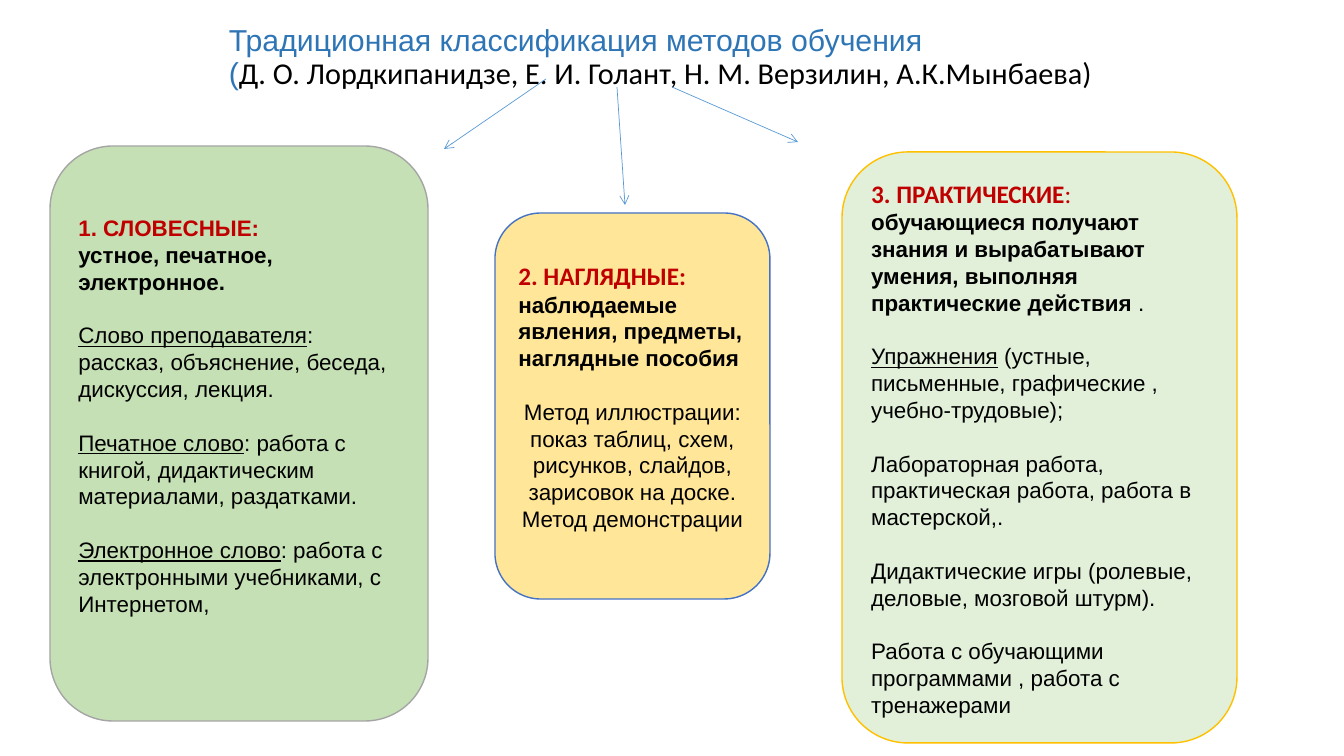
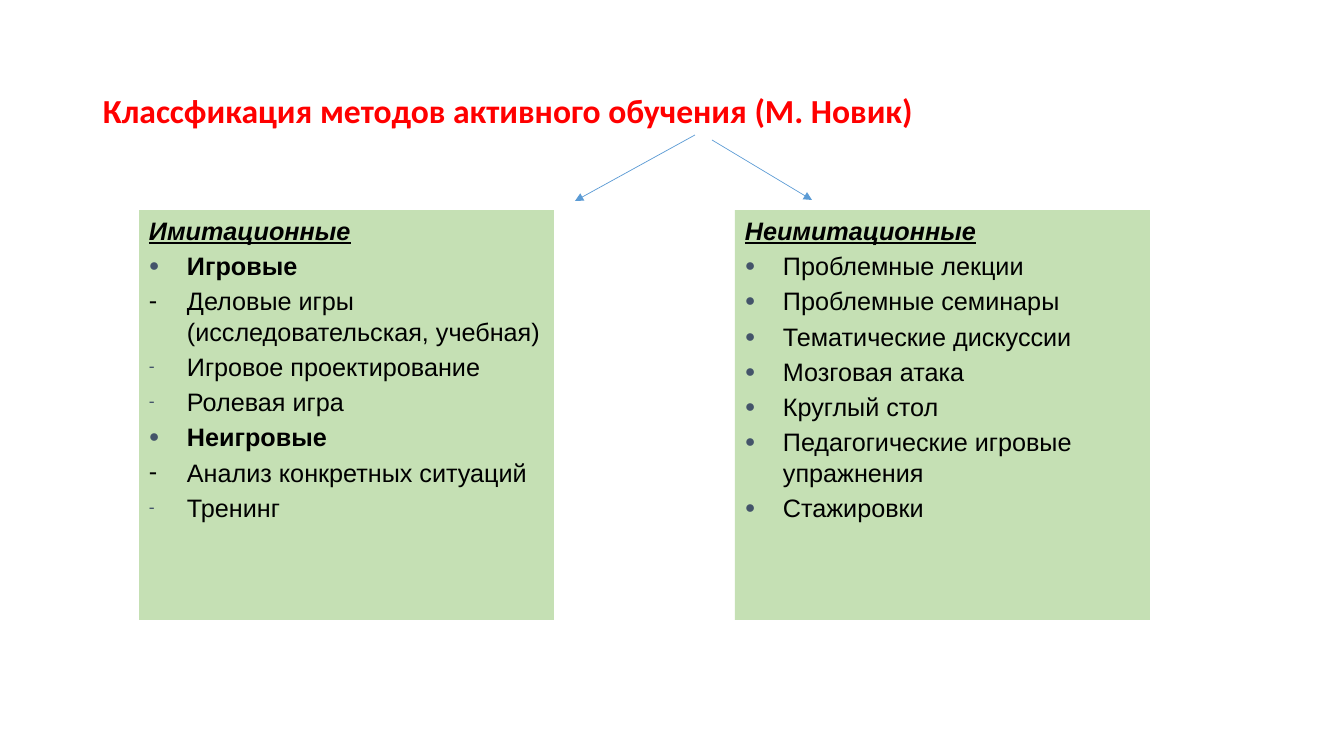
from lxml.etree import SubElement
from pptx import Presentation
from pptx.dml.color import RGBColor
from pptx.enum.shapes import MSO_CONNECTOR, MSO_SHAPE
from pptx.enum.text import MSO_ANCHOR, PP_ALIGN
from pptx.oxml.ns import qn
from pptx.util import Emu, Pt

PX = 914400 / 100.8

BLACK = RGBColor(0x00, 0x00, 0x00)
RED = RGBColor(0xFF, 0x00, 0x00)
DARK_RED = RGBColor(0xC0, 0x00, 0x00)
TITLE_BLUE = RGBColor(0x2E, 0x75, 0xB6)
ARROW_BLUE = RGBColor(0x5B, 0x9B, 0xD5)
BORDER_BLUE = RGBColor(0x44, 0x72, 0xC4)
SLATE = RGBColor(0x44, 0x54, 0x6A)
GRAY = RGBColor(0xA5, 0xA5, 0xA5)
GOLD = RGBColor(0xFF, 0xC0, 0x00)
GREEN = RGBColor(0xC5, 0xE0, 0xB4)
PALE_GREEN = RGBColor(0xE2, 0xF0, 0xD9)
YELLOW = RGBColor(0xFF, 0xE6, 0x99)

BODY = {"name": "Arial", "size": Pt(16), "color": BLACK}
STRONG = BODY | {"bold": True}
UNDERLINED = BODY | {"underline": True}
ARIAL_HEADING = STRONG | {"color": DARK_RED}
CALIBRI_HEADING = ARIAL_HEADING | {"name": "Calibri", "size": Pt(18)}
TITLE = {"name": "Arial", "size": Pt(21.6), "color": TITLE_BLUE}
AUTHORS = TITLE | {"name": "Calibri", "color": BLACK}
RED_TITLE = {"name": "Calibri", "size": Pt(24), "color": RED, "bold": True}
ITEM = BODY | {"size": Pt(18)}
GROUP = ITEM | {"bold": True}
LIST_HEADING = GROUP | {"italic": True, "underline": True}

GAP = {"space_before": Pt(19)}
CENTERED = {"alignment": PP_ALIGN.CENTER}
HANGING = 38

DOT = ("●", SLATE, 70)
SMALL_DASH = ("-", SLATE, 70)
DASH = ("-", BLACK, 100)


def px(value):
    return Emu(round(value * PX))


def set_attributes(target, values):
    for name, value in values.items():
        setattr(target, name, value)


def add_runs(paragraph, runs):
    for text, style in runs:
        run = paragraph.add_run()
        run.text = text
        set_attributes(run.font, {k: v for k, v in style.items() if k != "color"})
        run.font.color.rgb = style["color"]


def set_bullet(paragraph, bullet):
    properties = paragraph._p.get_or_add_pPr()
    properties.set("marL", str(px(HANGING)))
    properties.set("indent", str(-px(HANGING)))
    if bullet is None:
        SubElement(properties, qn("a:buNone"))
        return
    character, color, percent = bullet
    bullet_color = SubElement(properties, qn("a:buClr"))
    SubElement(bullet_color, qn("a:srgbClr"), val=str(color))
    SubElement(properties, qn("a:buSzPct"), val=str(percent * 1000))
    SubElement(properties, qn("a:buFont"), typeface="Arial")
    SubElement(properties, qn("a:buChar"), char=character)


def next_paragraph(frame, index):
    return frame.add_paragraph() if index else frame.paragraphs[0]


def add_title(slide, box, lines):
    frame = slide.shapes.add_textbox(*map(px, box)).text_frame
    set_attributes(frame, {"word_wrap": True, "vertical_anchor": MSO_ANCHOR.MIDDLE})
    paragraph = frame.paragraphs[0]
    paragraph.line_spacing = 0.9
    for index, runs in enumerate(lines):
        if index:
            paragraph.add_line_break()
        add_runs(paragraph, runs)


def add_panel(slide, kind, box, fill, border=None, top_margin=5):
    shape = slide.shapes.add_shape(kind, *map(px, box))
    shape.shadow.inherit = False
    shape.fill.solid()
    shape.fill.fore_color.rgb = fill
    if border is None:
        shape.line.fill.background()
    else:
        shape.line.color.rgb = border
        shape.line.width = Pt(1)
    frame = shape.text_frame
    set_attributes(frame, {"word_wrap": True, "vertical_anchor": MSO_ANCHOR.TOP,
                           "margin_top": px(top_margin)})
    return frame


def add_method_card(slide, box, fill, border, top_margin, paragraphs):
    frame = add_panel(slide, MSO_SHAPE.ROUNDED_RECTANGLE, box, fill, border, top_margin)
    for index, (layout, runs) in enumerate(paragraphs):
        paragraph = next_paragraph(frame, index)
        set_attributes(paragraph, {"alignment": PP_ALIGN.LEFT} | layout)
        add_runs(paragraph, runs)


def add_list_panel(slide, box, heading, items):
    frame = add_panel(slide, MSO_SHAPE.RECTANGLE, box, GREEN)
    rows = [(None, heading, LIST_HEADING), *items]
    for index, (bullet, text, style) in enumerate(rows):
        paragraph = next_paragraph(frame, index)
        paragraph.alignment = PP_ALIGN.LEFT
        if index:
            paragraph.space_before = Pt(3.6)
        set_bullet(paragraph, bullet)
        add_runs(paragraph, [(text, style)])


def add_arrows(slide, head, arrows):
    for ends in arrows:
        arrow = slide.shapes.add_connector(MSO_CONNECTOR.STRAIGHT, *map(px, ends))
        arrow.line.color.rgb = ARROW_BLUE
        arrow.line.width = Pt(0.5)
        SubElement(arrow.line._get_or_add_ln(), qn("a:tailEnd"), type=head)
        SubElement(arrow._element.spPr, qn("a:effectLst"))


def build_traditional_slide(slide):
    add_title(slide, (219, 30, 907, 56), [
        [("Традиционная классификация методов обучения ", TITLE)],
        [("(", TITLE),
         ("Д. О. Лордкипанидзе, Е. И. Голант, Н. М. Верзилин, А.К.Мынбаева)", AUTHORS)],
    ])
    add_method_card(slide, (50, 146, 378, 575), GREEN, GRAY, 50, [
        ({}, [("1. СЛОВЕСНЫЕ:", ARIAL_HEADING)]),
        ({}, [("устное, печатное, электронное.", STRONG)]),
        (GAP, [("Слово преподавателя", UNDERLINED),
               (": рассказ, объяснение, беседа, дискуссия, лекция.", BODY)]),
        (GAP, [("Печатное слово", UNDERLINED),
               (": работа с книгой, дидактическим материалами, раздатками.", BODY)]),
        (GAP, [("Электронное слово", UNDERLINED),
               (": работа с электронными учебниками, с Интернетом,", BODY)]),
    ])
    add_method_card(slide, (495, 213, 275, 386), YELLOW, BORDER_BLUE, 34, [
        ({}, [("2. НАГЛЯДНЫЕ: ", CALIBRI_HEADING),
              ("наблюдаемые явления, предметы, наглядные пособия", STRONG)]),
        (GAP | CENTERED, [("Метод иллюстрации: показ таблиц, схем, рисунков, "
                           "слайдов, зарисовок на доске.", BODY)]),
        (CENTERED, [("Метод демонстрации", BODY)]),
    ])
    add_method_card(slide, (842, 152, 395, 591), PALE_GREEN, GOLD, 7, [
        ({}, [("3. ПРАКТИЧЕСКИЕ", CALIBRI_HEADING),
              (": ", CALIBRI_HEADING | {"bold": False}),
              ("обучающиеся получают знания и вырабатывают умения, "
               "выполняя практические действия ", STRONG),
              (".", BODY)]),
        (GAP, [("Упражнения", UNDERLINED),
               (" (устные, письменные, графические , учебно-трудовые);", BODY)]),
        (GAP, [("Лабораторная работа, практическая работа, работа в мастерской,.", BODY)]),
        (GAP, [("Дидактические игры (ролевые, деловые, мозговой штурм).", BODY)]),
        (GAP, [("Работа с обучающими программами , работа с тренажерами", BODY)]),
    ])
    add_arrows(slide, "arrow", [
        (546, 79, 444, 149),
        (617, 87, 625, 205),
        (672, 87, 798, 142),
    ])


def build_active_slide(slide):
    add_title(slide, (93, 40, 1159, 146), [
        [("Классфикация методов активного обучения (М. Новик)", RED_TITLE)],
    ])
    add_list_panel(slide, (139, 210, 415, 410), "Имитационные", [
        (DOT, "Игровые", GROUP),
        (DASH, "Деловые игры (исследовательская, учебная)", ITEM),
        (SMALL_DASH, "Игровое проектирование", ITEM),
        (SMALL_DASH, "Ролевая игра", ITEM),
        (DOT, "Неигровые", GROUP),
        (DASH, "Анализ конкретных ситуаций", ITEM),
        (SMALL_DASH, "Тренинг", ITEM),
    ])
    topics = ["Проблемные лекции", "Проблемные семинары", "Тематические дискуссии",
              "Мозговая атака", "Круглый стол", "Педагогические игровые упражнения",
              "Стажировки"]
    add_list_panel(slide, (735, 210, 415, 410), "Неимитационные",
                   [(DOT, topic, ITEM) for topic in topics])
    add_arrows(slide, "triangle", [
        (695, 135, 575, 201),
        (712, 140, 812, 200),
    ])


def main():
    presentation = Presentation()
    presentation.slide_width = px(1344)
    presentation.slide_height = px(756)
    blank = presentation.slide_layouts[6]
    for build in (build_traditional_slide, build_active_slide):
        build(presentation.slides.add_slide(blank))
    presentation.save("out.pptx")


if __name__ == "__main__":
    main()
